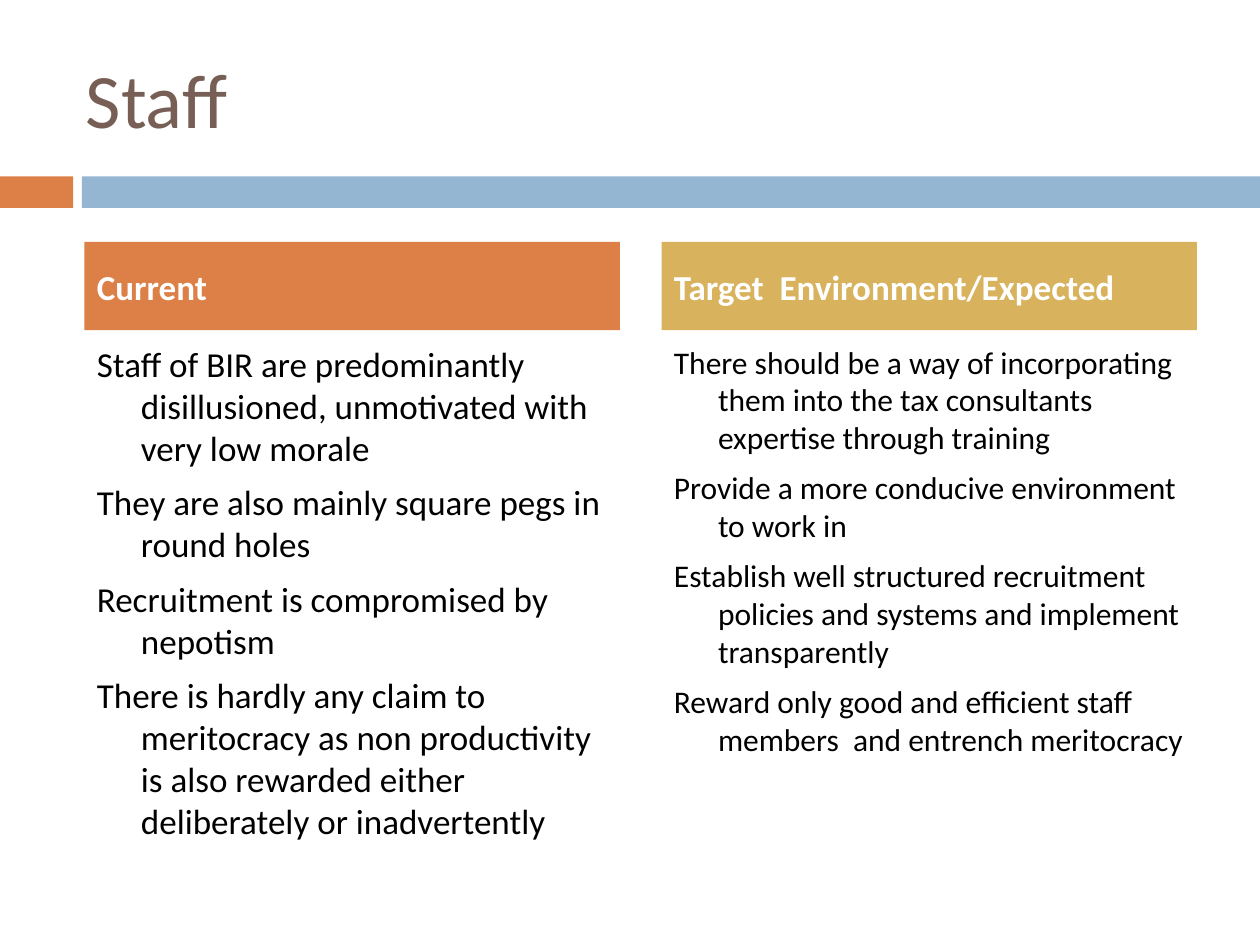
"""Build the Staff slide comparing the current and the target environment."""
from pptx import Presentation
from pptx.dml.color import RGBColor
from pptx.enum.shapes import MSO_SHAPE
from pptx.enum.text import MSO_ANCHOR, PP_ALIGN
from pptx.util import Inches, Pt

COLORS = {
    "orange": "DD8047",
    "blue": "94B6D2",
    "gold": "D8B25C",
    "brown": "775F55",
    "black": "000000",
    "white": "FFFFFF",
}
FONT = "Calibri"
COLUMN_WIDTH = 4.25

COLUMNS = [
    (0.67, "Current", "orange", 20, [
        "Staff of BIR are predominantly disillusioned, unmotivated with very low morale",
        "They are also mainly square pegs in round holes",
        "Recruitment is compromised by nepotism",
        "There is hardly any claim to meritocracy as non productivity is also "
        "rewarded either deliberately or inadvertently",
    ]),
    (5.25, "Target  Environment/Expected", "gold", 18, [
        "There should be a way of incorporating them into the tax consultants "
        "expertise through training",
        "Provide a more conducive environment to work in",
        "Establish well structured recruitment policies and systems and implement "
        "transparently",
        "Reward only good and efficient staff members  and entrench meritocracy",
    ]),
]


def add_block(left, top, width, height, color):
    block = slide.shapes.add_shape(
        MSO_SHAPE.RECTANGLE, Inches(left), Inches(top), Inches(width), Inches(height))
    block.shadow.inherit = False
    block.fill.solid()
    block.fill.fore_color.rgb = RGBColor.from_string(COLORS[color])
    block.line.fill.background()
    return block


def style(paragraph, size, color, bold=False):
    paragraph.alignment = PP_ALIGN.LEFT
    paragraph.font.name = FONT
    paragraph.font.size = Pt(size)
    paragraph.font.bold = bold
    paragraph.font.color.rgb = RGBColor.from_string(COLORS[color])


prs = Presentation()
prs.slide_width, prs.slide_height = Inches(10), Inches(7.5)
slide = prs.slides.add_slide(prs.slide_layouts[5])

add_block(0, 1.4, 0.58, 0.25, "orange")
add_block(0.65, 1.4, 9.35, 0.25, "blue")

title = slide.shapes.title
title.left, title.top = Inches(0.58), Inches(0.3)
title.width, title.height = Inches(8.92), Inches(0.95)
title.text_frame.text = "Staff"
title.text_frame.vertical_anchor = MSO_ANCHOR.MIDDLE
style(title.text_frame.paragraphs[0], 44, "brown")

for left, heading, color, size, points in COLUMNS:
    header = add_block(left, 1.92, COLUMN_WIDTH, 0.7, color).text_frame
    header.text = heading
    header.vertical_anchor = MSO_ANCHOR.MIDDLE
    style(header.paragraphs[0], 20, "white", bold=True)
    header.paragraphs[0].space_before = Pt(7)

    body = slide.shapes.add_textbox(
        Inches(left), Inches(2.67), Inches(COLUMN_WIDTH), Inches(3.92)).text_frame
    body.word_wrap = True
    body.text = "\n".join(points)
    for paragraph in body.paragraphs:
        style(paragraph, size, "black")
        paragraph.space_before = Pt(7)
        properties = paragraph._p.get_or_add_pPr()
        properties.set("marL", str(Inches(0.35)))
        properties.set("indent", str(Inches(-0.35)))

prs.save("out.pptx")
